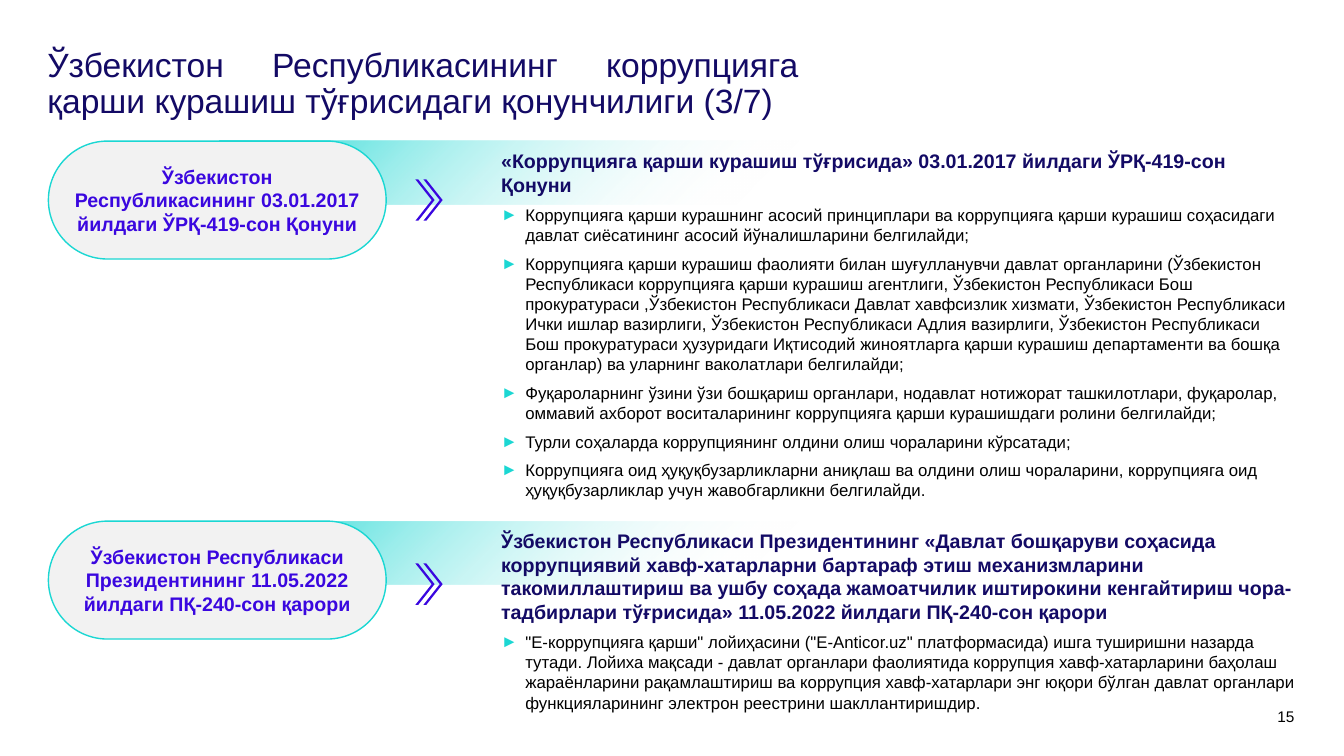
from lxml.etree import SubElement
from pptx import Presentation
from pptx.dml.color import RGBColor
from pptx.enum.shapes import MSO_SHAPE
from pptx.enum.text import MSO_ANCHOR, MSO_AUTO_SIZE, PP_ALIGN
from pptx.oxml.ns import qn
from pptx.util import Inches, Pt

THEME = {
    "font": "Arial",
    "navy": RGBColor.from_string("130A65"),
    "violet": RGBColor.from_string("3A07DF"),
    "teal": RGBColor.from_string("1BD7D3"),
    "grey": RGBColor.from_string("F2F2F2"),
    "white": RGBColor.from_string("FFFFFF"),
    "black": RGBColor.from_string("000000"),
    "title": Pt(24),
    "heading": Pt(14),
    "body": Pt(12),
    "number": Pt(11),
}
STYLES = {
    "title": ("title", "navy", False, {"alignment": PP_ALIGN.JUSTIFY, "line_spacing": 0.9}),
    "law": ("heading", "violet", True, {"alignment": PP_ALIGN.CENTER}),
    "heading": ("heading", "navy", True, {"space_after": Pt(6)}),
    "point": ("body", "black", False, {"space_after": Pt(6)}),
    "number": ("number", "black", False, {"alignment": PP_ALIGN.RIGHT}),
}
SECTIONS = [
    {
        "top": 1.4,
        "height": 3.6,
        "arrow_top": 1.78,
        "law": "Ўзбекистон Республикасининг 03.01.2017 йилдаги ЎРҚ-419-сон Қонуни",
        "heading": "«Коррупцияга қарши курашиш тўғрисида» 03.01.2017 йилдаги ЎРҚ-419-сон Қонуни",
        "points": [
            "Коррупцияга қарши курашнинг асосий принциплари ва коррупцияга қарши курашиш соҳасидаги "
            "давлат сиёсатининг асосий йўналишларини белгилайди;",
            "Коррупцияга қарши курашиш фаолияти билан шуғулланувчи давлат органларини (Ўзбекистон "
            "Республикаси коррупцияга қарши курашиш агентлиги, Ўзбекистон Республикаси Бош "
            "прокуратураси ,Ўзбекистон Республикаси Давлат хавфсизлик хизмати, Ўзбекистон Республикаси "
            "Ички ишлар вазирлиги, Ўзбекистон Республикаси Адлия вазирлиги, Ўзбекистон Республикаси "
            "Бош прокуратураси ҳузуридаги Иқтисодий жиноятларга қарши курашиш департаменти ва бошқа "
            "органлар) ва уларнинг ваколатлари белгилайди;",
            "Фуқароларнинг ўзини ўзи бошқариш органлари, нодавлат нотижорат ташкилотлари, фуқаролар, "
            "оммавий ахборот воситаларининг коррупцияга қарши курашишдаги ролини белгилайди;",
            "Турли соҳаларда коррупциянинг олдини олиш чораларини кўрсатади;",
            "Коррупцияга оид ҳуқуқбузарликларни аниқлаш ва олдини олиш чораларини, коррупцияга оид "
            "ҳуқуқбузарликлар учун жавобгарликни белгилайди.",
        ],
    },
    {
        "top": 5.17,
        "height": 1.91,
        "arrow_top": 5.59,
        "law": "Ўзбекистон Республикаси Президентининг 11.05.2022 йилдаги ПҚ-240-сон қарори",
        "heading": "Ўзбекистон Республикаси Президентининг «Давлат бошқаруви соҳасида коррупциявий "
        "хавф-хатарларни бартараф этиш механизмларини такомиллаштириш ва ушбу соҳада жамоатчилик "
        "иштирокини кенгайтириш чора-тадбирлари тўғрисида» 11.05.2022 йилдаги ПҚ-240-сон қарори",
        "points": [
            '"Е-коррупцияга қарши" лойиҳасини ("E-Anticor.uz" платформасида) ишга туширишни назарда '
            "тутади. Лойиха мақсади - давлат органлари фаолиятида коррупция хавф-хатарларини баҳолаш "
            "жараёнларини рақамлаштириш ва коррупция хавф-хатарлари энг юқори бўлган давлат органлари "
            "функцияларининг электрон реестрини шакллантиришдир.",
        ],
    },
]


def write(frame, lines, margins=(0, 0, 0, 0)):
    frame.word_wrap = True
    for side, margin in zip(("left", "top", "right", "bottom"), margins):
        setattr(frame, f"margin_{side}", Inches(margin))
    for index, (style, text) in enumerate(lines):
        paragraph = frame.add_paragraph() if index else frame.paragraphs[0]
        size, color, bold, layout = STYLES[style]
        for name, value in layout.items():
            setattr(paragraph, name, value)
        if style == "point":
            properties = paragraph._p.get_or_add_pPr()
            properties.set("marL", str(Inches(0.24)))
            properties.set("indent", str(-Inches(0.24)))
            bullet_color = SubElement(properties, qn("a:buClr"))
            SubElement(bullet_color, qn("a:srgbClr"), val=str(THEME["teal"]))
            SubElement(properties, qn("a:buFont"), typeface=THEME["font"])
            SubElement(properties, qn("a:buChar"), char="►")
        run = paragraph.add_run()
        run.text = text
        for name, value in {"name": THEME["font"], "size": THEME[size], "bold": bold}.items():
            setattr(run.font, name, value)
        run.font.color.rgb = THEME[color]


def add_plain(preset, left, top, width, height):
    shape = slide.shapes.add_shape(preset, Inches(left), Inches(top), Inches(width), Inches(height))
    shape.shadow.inherit = False
    shape.line.fill.background()
    return shape


deck = Presentation()
deck.slide_width, deck.slide_height = Inches(13.33), Inches(7.5)
slide = deck.slides.add_slide(deck.slide_layouts[6])

title = slide.shapes.add_textbox(Inches(0.47), Inches(0.48), Inches(7.45), Inches(0.48))
write(title.text_frame, [
    ("title", "Ўзбекистон Республикасининг коррупцияга қарши курашиш тўғрисидаги қонунчилиги (3/7)"),
])

for section in SECTIONS:
    top = section["top"]

    band = add_plain(MSO_SHAPE.RECTANGLE, 2.18, top, 10.67, 0.63)
    band.fill.gradient()
    band.fill.gradient_angle = 135
    clear, tint = band.fill.gradient_stops
    clear.position, clear.color.rgb = 0.49, THEME["white"]
    tint.position, tint.color.rgb = 1, THEME["teal"]
    clear_color = next(band._element.spPr.iter(qn("a:srgbClr")))
    SubElement(clear_color, qn("a:alpha"), val="0")

    law = add_plain(MSO_SHAPE.ROUNDED_RECTANGLE, 0.48, top, 3.35, 1.17)
    law.adjustments[0] = 0.5
    law.fill.solid()
    law.fill.fore_color.rgb = THEME["grey"]
    law.line.color.rgb = THEME["teal"]
    law.line.width = Pt(1)
    law.text_frame.vertical_anchor = MSO_ANCHOR.MIDDLE
    write(law.text_frame, [("law", section["law"])], (0.05,) * 4)

    summary = slide.shapes.add_textbox(
        Inches(4.97), Inches(top), Inches(7.88), Inches(section["height"])
    )
    summary.text_frame.auto_size = MSO_AUTO_SIZE.SHAPE_TO_FIT_TEXT
    points = [("point", point) for point in section["points"]]
    write(summary.text_frame, [("heading", section["heading"]), *points], (0, 0.08, 0, 0))

    for left in (4.12, 4.2):
        arrow = add_plain(MSO_SHAPE.CHEVRON, left, section["arrow_top"], 0.19, 0.41)
        arrow.adjustments[0] = 0.85
        arrow.fill.solid()
        arrow.fill.fore_color.rgb = THEME["violet"]

number = slide.shapes.add_textbox(Inches(12.41), Inches(7.02), Inches(0.43), Inches(0.16))
write(number.text_frame, [("number", "15")])

deck.save("out.pptx")
